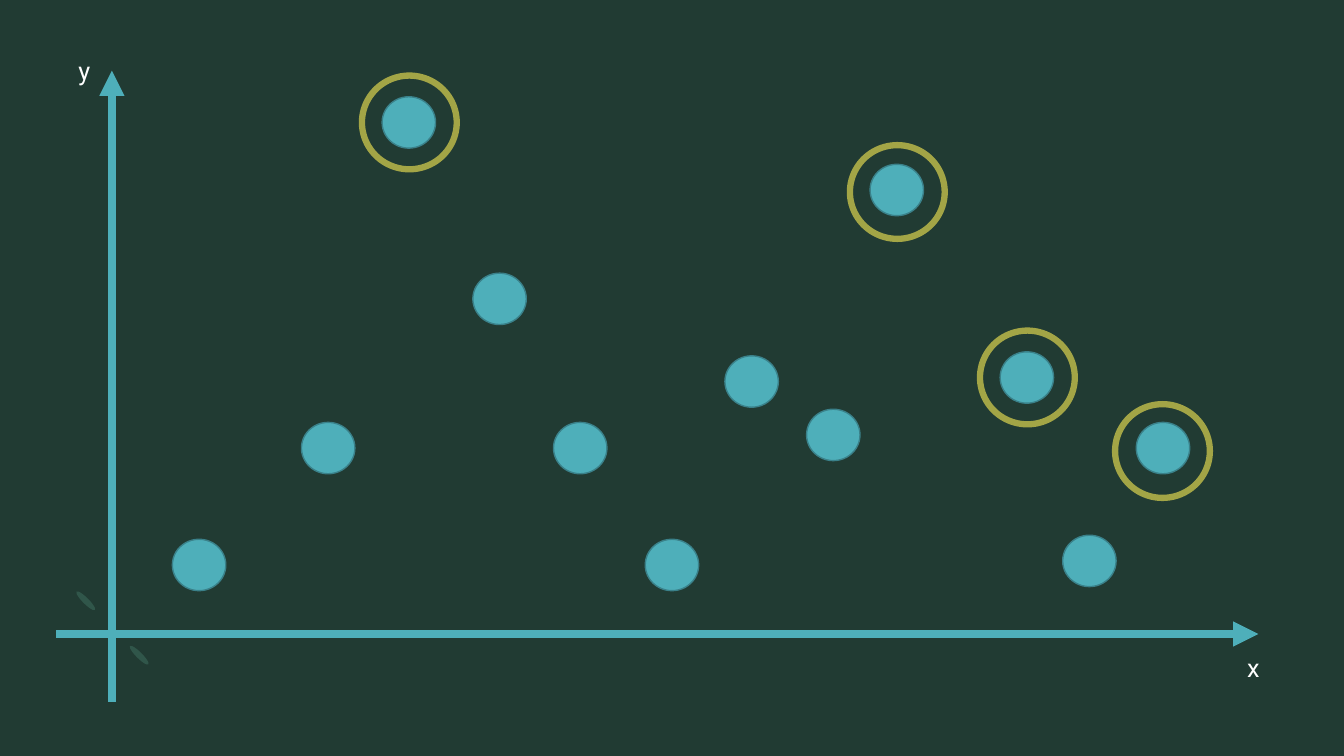
"""Build a scatter plot slide whose outlying points are ringed."""
from lxml.etree import SubElement
from pptx import Presentation
from pptx.dml.color import RGBColor
from pptx.enum.shapes import MSO_CONNECTOR, MSO_SHAPE
from pptx.enum.text import MSO_AUTO_SIZE
from pptx.oxml.ns import qn
from pptx.util import Inches, Pt

COLORS = {
    "background": "213B33",
    "leaf": "30564A",
    "point": "4EAFBA",
    "point_edge": "3A818A",
    "ring": "A3A546",
    "label": "FFFFFF",
}
LEAVES = [(1.35, 6.37), (0.82, 5.83)]
LEAF_SIZE = (0.06, 0.26)
AXES = [((1.11, 6.96), (1.11, 0.7)), ((0.56, 6.29), (12.48, 6.29))]
LABELS = [("x", 12.27, 6.42), ("y", 0.68, 0.5)]
LABEL_SIZE = (0.43, 0.4)
LABEL_FONT = {"name": "Roboto", "size": Pt(18)}
POINTS = [
    (1.71, 5.35), (2.99, 4.19), (3.79, 0.96), (4.69, 2.71),
    (5.49, 4.19), (6.4, 5.35), (7.19, 3.53), (8, 4.06),
    (8.63, 1.63), (9.92, 3.49), (10.54, 5.31), (11.27, 4.19),
]
POINT_SIZE = (0.53, 0.51)
RINGS = [(3.59, 0.75), (8.43, 1.44), (9.72, 3.28), (11.06, 4.01)]
RING_SIZE = (0.94, 0.93)


def color(name):
    return RGBColor.from_string(COLORS[name])


def add_ellipse(slide, position, size, fill=None, line=None, width=0, rotation=0):
    box = [Inches(length) for length in position + size]
    shape = slide.shapes.add_shape(MSO_SHAPE.OVAL, *box)
    shape.shadow.inherit = False
    shape.rotation = rotation
    if fill:
        shape.fill.solid()
        shape.fill.fore_color.rgb = color(fill)
    else:
        shape.fill.background()
    if line:
        shape.line.color.rgb = color(line)
        shape.line.width = Pt(width)
    else:
        shape.line.fill.background()


def add_axis(slide, start, end):
    ends = [Inches(length) for length in start + end]
    connector = slide.shapes.add_connector(MSO_CONNECTOR.STRAIGHT, *ends)
    connector.line.color.rgb = color("point")
    connector.line.width = Pt(6)
    properties = connector._element.spPr
    SubElement(properties.find(qn("a:ln")), qn("a:tailEnd"), type="triangle")
    SubElement(properties, qn("a:effectLst"))


def add_label(slide, text, left, top):
    box = [Inches(length) for length in (left, top) + LABEL_SIZE]
    frame = slide.shapes.add_textbox(*box).text_frame
    frame.word_wrap = True
    frame.auto_size = MSO_AUTO_SIZE.SHAPE_TO_FIT_TEXT
    run = frame.paragraphs[0].add_run()
    run.text = text
    for attribute, value in LABEL_FONT.items():
        setattr(run.font, attribute, value)
    run.font.color.rgb = color("label")


def main():
    presentation = Presentation()
    presentation.slide_width = Inches(13.33)
    presentation.slide_height = Inches(7.5)
    slide = presentation.slides.add_slide(presentation.slide_layouts[6])
    slide.background.fill.solid()
    slide.background.fill.fore_color.rgb = color("background")

    for position in LEAVES:
        add_ellipse(slide, position, LEAF_SIZE, fill="leaf", rotation=135)
    for start, end in AXES:
        add_axis(slide, start, end)
    for text, left, top in LABELS:
        add_label(slide, text, left, top)
    for position in POINTS:
        add_ellipse(slide, position, POINT_SIZE, "point", "point_edge", 1)
    for position in RINGS:
        add_ellipse(slide, position, RING_SIZE, line="ring", width=4.5)

    presentation.save("out.pptx")


if __name__ == "__main__":
    main()
